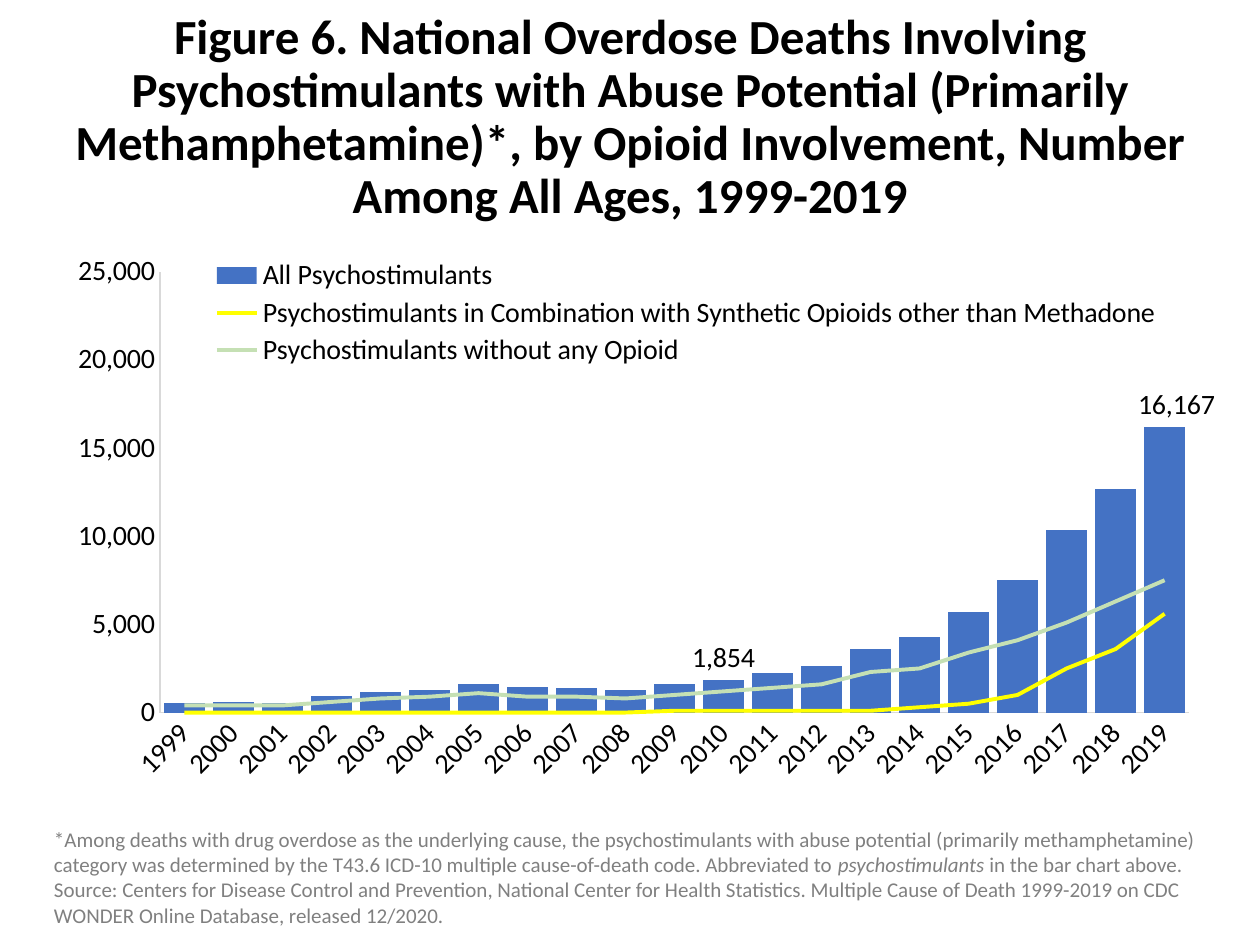
from lxml.etree import SubElement
from pptx import Presentation
from pptx.chart.data import CategoryChartData
from pptx.dml.color import RGBColor
from pptx.enum.chart import XL_CHART_TYPE, XL_LABEL_POSITION, XL_LEGEND_POSITION, XL_TICK_MARK
from pptx.enum.text import MSO_ANCHOR, PP_ALIGN
from pptx.oxml import parse_xml
from pptx.oxml.ns import nsdecls, qn
from pptx.util import Inches, Pt

BLACK = RGBColor(0x00, 0x00, 0x00)
GRAY = RGBColor(0x80, 0x80, 0x80)
AXIS_GRAY = RGBColor(0xD9, 0xD9, 0xD9)
BLUE = RGBColor(0x44, 0x72, 0xC4)
YELLOW = RGBColor(0xFF, 0xFF, 0x00)
GREEN = RGBColor(0xC5, 0xE0, 0xB4)

TITLE = (
    "Figure 6. National Overdose Deaths Involving Psychostimulants with Abuse Potential "
    "(Primarily Methamphetamine)*, by Opioid Involvement, Number Among All Ages, 1999-2019"
)
FOOTNOTE = [
    ("*Among deaths with drug overdose as the underlying cause, the psychostimulants with "
     "abuse potential (primarily methamphetamine) category was determined by the T43.6 "
     "ICD-10 multiple cause-of-death code. Abbreviated to ", False),
    ("psychostimulants", True),
    (" in the bar chart above. Source: Centers for Disease Control and Prevention, National "
     "Center for Health Statistics. Multiple Cause of Death 1999-2019 on CDC WONDER Online "
     "Database, released 12/2020.", False),
]
YEARS = [str(year) for year in range(1999, 2020)]
SERIES = [
    ("All Psychostimulants", BLUE,
     [547, 578, 563, 941, 1179, 1305, 1608, 1462, 1378, 1302, 1632, 1854, 2266, 2635,
      3627, 4298, 5716, 7542, 10333, 12676, 16167]),
    ("Psychostimulants in Combination with Synthetic Opioids other than Methadone", YELLOW,
     [0] * 10 + [100] * 5 + [300, 500, 1000, 2500, 3600, 5600]),
    ("Psychostimulants without any Opioid", GREEN,
     [400, 400, 400, 600, 800, 900, 1100, 900, 900, 800, 1000, 1200, 1400, 1600,
      2300, 2500, 3400, 4100, 5100, 6300, 7500]),
]
LABELED_YEARS = ["2010", "2019"]
LAST_LABEL_SHIFT = {"x": 0.01, "y": 0}
PLOT_LAYOUT = {"layoutTarget": "inner", "xMode": "edge", "yMode": "edge",
               "x": 0.1, "y": 0.03, "w": 0.87, "h": 0.8}
LEGEND_LAYOUT = {"xMode": "edge", "yMode": "edge", "x": 0.13, "y": 0, "w": 0.83, "h": 0.21}


def format_font(font, size, color, **extra):
    """Apply the shared typeface with a size, a colour and other font values."""
    for name, value in {"name": "Calibri", "size": Pt(size), **extra}.items():
        setattr(font, name, value)
    font.color.rgb = color


def place(shape, left, top, width, height):
    """Set position and size in inches."""
    for name, value in {"left": left, "top": top, "width": width, "height": height}.items():
        setattr(shape, name, Inches(value))


def set_layout(parent, values, successor):
    """Give a chart part a manual layout, placed just after the named child."""
    for old in parent.findall(qn("c:layout")):
        parent.remove(old)
    layout = parse_xml(f"<c:layout {nsdecls('c')}><c:manualLayout/></c:layout>")
    for name, value in values.items():
        SubElement(layout[0], qn(f"c:{name}")).set("val", str(value))
    if successor is None:
        parent.insert(0, layout)
    else:
        parent.find(qn(successor)).addnext(layout)


def move_to_lines(chart):
    """Move every series after the first into a line plot on the same axes."""
    bars = chart.plots[0]._element
    lines = parse_xml(
        f"<c:lineChart {nsdecls('c')}><c:grouping val='standard'/><c:varyColors val='0'/>"
        "<c:marker val='1'/></c:lineChart>")
    plot_marker = lines.find(qn("c:marker"))
    for ser in bars.findall(qn("c:ser"))[1:]:
        for flag in ser.findall(qn("c:invertIfNegative")):
            ser.remove(flag)
        marker = parse_xml(f"<c:marker {nsdecls('c')}><c:symbol val='none'/></c:marker>")
        ser.find(qn("c:tx")).addnext(marker)
        SubElement(ser, qn("c:smooth")).set("val", "0")
        plot_marker.addprevious(ser)
    for axis in bars.findall(qn("c:axId")):
        SubElement(lines, qn("c:axId")).set("val", axis.get("val"))
    bars.addnext(lines)


def add_title(page):
    """Fill the title placeholder."""
    title = page.shapes.title
    place(title, 0, 0, 10, 1.87)
    frame = title.text_frame
    frame.word_wrap = True
    frame.vertical_anchor = MSO_ANCHOR.MIDDLE
    para = frame.paragraphs[0]
    para.alignment = PP_ALIGN.CENTER
    para.line_spacing = 0.9
    span = para.add_run()
    span.text = TITLE
    format_font(span.font, 28, BLACK, bold=True)


def add_footnote(page):
    """Write the note below the chart."""
    box = page.shapes.add_textbox(Inches(0.33), Inches(6.51), Inches(9.39), Inches(0.91))
    box.text_frame.word_wrap = True
    para = box.text_frame.paragraphs[0]
    for text, italic in FOOTNOTE:
        span = para.add_run()
        span.text = text
        format_font(span.font, 12, GRAY, italic=italic)


def add_deaths_chart(page):
    """Draw yearly deaths as columns with two lines over them."""
    data = CategoryChartData(number_format="#,##0")
    data.categories = YEARS
    for name, _, values in SERIES:
        data.add_series(name, values)
    chart = page.shapes.add_chart(
        XL_CHART_TYPE.COLUMN_CLUSTERED, Inches(0.33), Inches(2.02), Inches(9.39),
        Inches(4.38), data).chart
    format_font(chart.font, 16, BLACK)
    chart.has_title = False
    chart.has_legend = True
    chart.legend.position = XL_LEGEND_POSITION.BOTTOM
    chart.legend.include_in_layout = False
    format_font(chart.legend.font, 16, BLACK)
    set_layout(chart.legend._element, LEGEND_LAYOUT, "c:legendPos")

    for axis in (chart.category_axis, chart.value_axis):
        axis.major_tick_mark = axis.minor_tick_mark = XL_TICK_MARK.NONE
        axis.has_major_gridlines = False
        axis.format.line.color.rgb = AXIS_GRAY
        axis.format.line.width = Pt(0.75)
        format_font(axis.tick_labels.font, 16, BLACK)
    chart.category_axis._element.find(qn("c:txPr")).find(qn("a:bodyPr")).set("rot", "-2700000")
    scale = {"minimum_scale": 0, "maximum_scale": 25000, "major_unit": 5000}
    for name, value in scale.items():
        setattr(chart.value_axis, name, value)
    chart.value_axis.tick_labels.number_format = "#,##0"
    chart.value_axis.tick_labels.number_format_is_linked = False

    plot = chart.plots[0]
    for name, value in {"gap_width": 20, "overlap": -1, "vary_by_categories": False}.items():
        setattr(plot, name, value)
    columns = plot.series[0]
    columns.format.fill.solid()
    columns.format.fill.fore_color.rgb = BLUE
    for year in LABELED_YEARS:
        label = columns.points[YEARS.index(year)].data_label
        label.position = XL_LABEL_POSITION.OUTSIDE_END
        format_font(label.font, 16, BLACK)
    columns.data_labels.show_value = False
    last_label = columns._element.find(qn("c:dLbls")).findall(qn("c:dLbl"))[-1]
    set_layout(last_label, LAST_LABEL_SHIFT, "c:idx")

    move_to_lines(chart)
    for line, (_, color, _) in zip(chart.plots[1].series, SERIES[1:]):
        line.format.line.color.rgb = color
        line.format.line.width = Pt(2.25)
    set_layout(plot._element.getparent(), PLOT_LAYOUT, None)


def main():
    """Build and save the slide."""
    deck = Presentation()
    deck.slide_width, deck.slide_height = Inches(10), Inches(7.5)
    page = deck.slides.add_slide(deck.slide_layouts[5])
    add_title(page)
    add_footnote(page)
    add_deaths_chart(page)
    deck.save("out.pptx")


if __name__ == "__main__":
    main()
